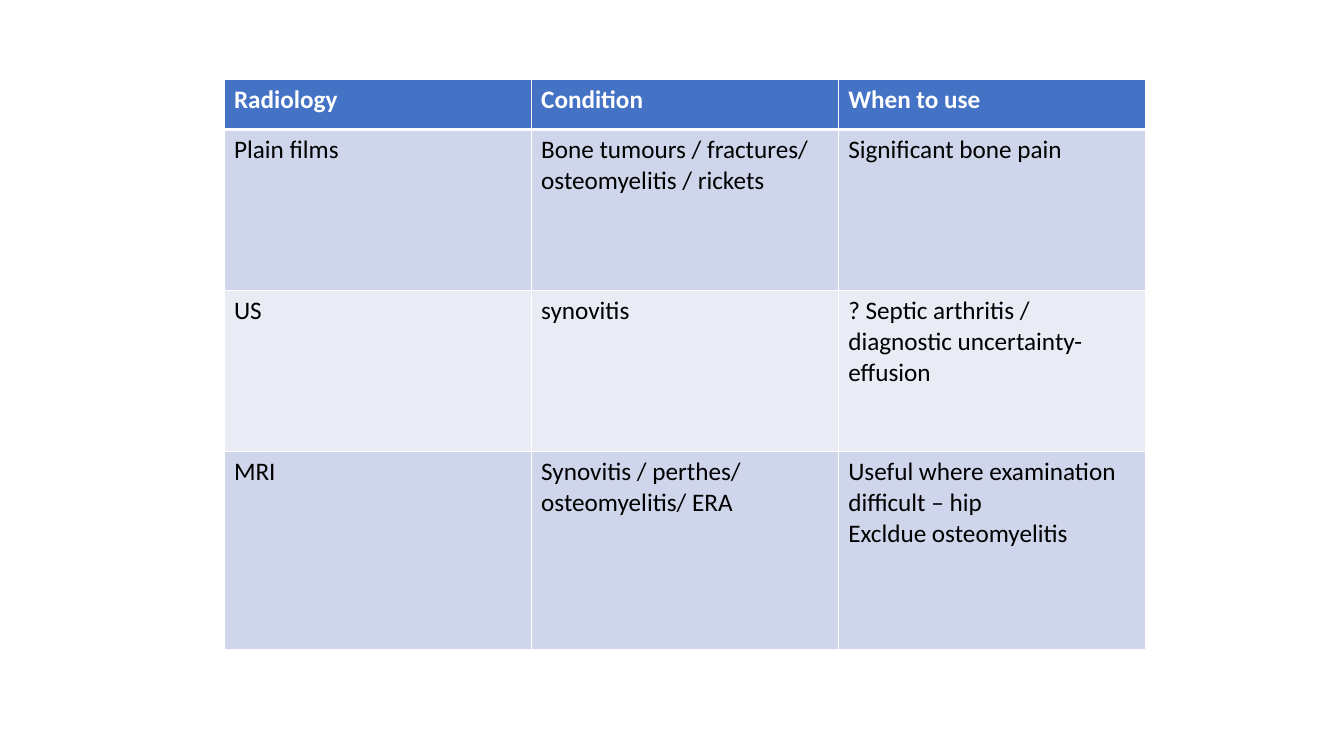
import pptx
import pptx.util
import pptx.dml.color
import pptx.oxml
import pptx.oxml.ns
from pptx.util import Pt

HEADS = ["Radiology", "Condition", "When to use"]
ROWS = [
    ["Plain films", "Bone tumours / fractures/ osteomyelitis / rickets",
     "Significant bone pain"],
    ["US", "synovitis",
     "? Septic arthritis / diagnostic uncertainty- effusion"],
    ["MRI", "Synovitis / perthes/ osteomyelitis/ ERA",
     "Useful where examination difficult – hip\nExcldue osteomyelitis"],
]
WIDTH = 219.4
TALL = [35.8, 115, 115, 141.4]
BANDS = ["CFD5EA", "E9EBF5"]


def paint(fill, tint):
    """Give a fill one solid colour."""
    fill.solid()
    fill.fore_color.rgb = pptx.dml.color.RGBColor.from_string(tint)


def edge(cell, side, width, tint):
    """Draw one border of a cell."""
    space = pptx.oxml.ns.nsdecls("a")
    line = pptx.oxml.parse_xml(
        f'<a:{side} {space} w="{Pt(width)}"><a:solidFill>'
        f'<a:srgbClr val="{tint}"/></a:solidFill></a:{side}>')
    cell._tc.get_or_add_tcPr().append(line)


def style(cell, text, row):
    """Write a cell and style it by its row."""
    head = row == 0
    top = 3 if row == 1 else 1
    base = 3 if head else 1
    for side, width in zip(["lnL", "lnR", "lnT", "lnB"], [1, 1, top, base]):
        edge(cell, side, width, "FFFFFF")
    paint(cell.fill, "4472C4" if head else BANDS[(row - 1) % 2])
    cell.text_frame.text = text
    for para in cell.text_frame.paragraphs:
        for run in para.runs:
            run.font.name = "Calibri"
            run.font.size = Pt(18)
            run.font.bold = head
            paint(run.font.fill, "FFFFFF" if head else "000000")


def grid(slide, data, left, top):
    """Add the table and fill its cells."""
    count = len(data[0])
    frame = slide.shapes.add_table(
        len(data), count, Pt(left), Pt(top), Pt(WIDTH * count), Pt(sum(TALL)))
    table = frame.table
    for col in table.columns:
        col.width = Pt(WIDTH)
    for row, texts in enumerate(data):
        table.rows[row].height = Pt(TALL[row])
        for col, text in enumerate(texts):
            style(table.cell(row, col), text, row)


def main():
    """Build the slide and save it."""
    deck = pptx.Presentation()
    deck.slide_width, deck.slide_height = Pt(960), Pt(540)
    slide = deck.slides.add_slide(deck.slide_layouts[6])
    grid(slide, [HEADS] + ROWS, 160, 56.8)
    deck.save("out.pptx")


if __name__ == "__main__":
    main()
